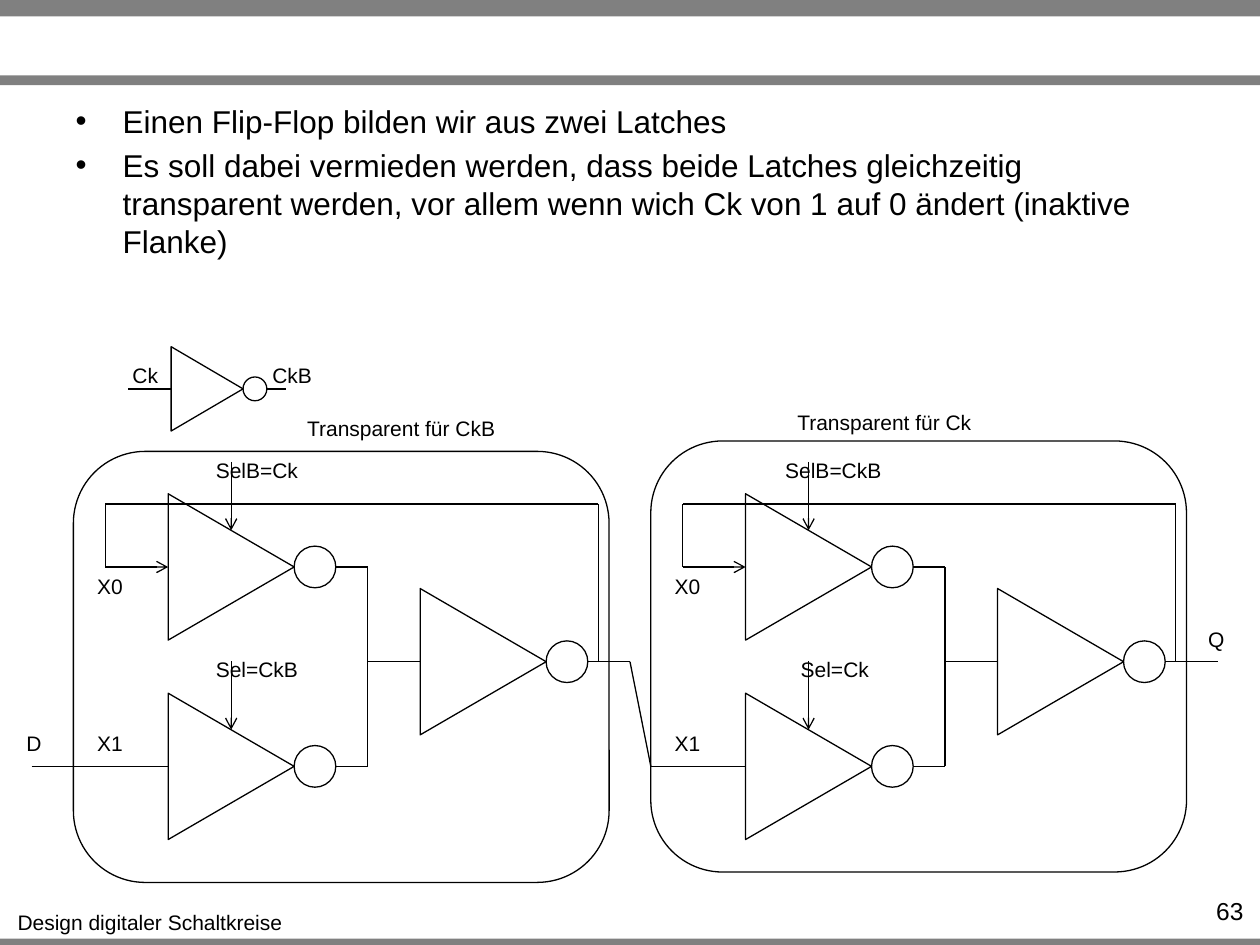
import itertools
from dataclasses import dataclass

import lxml.etree
import pptx
import pptx.dml.color
import pptx.enum.shapes
import pptx.enum.text
import pptx.oxml.ns
import pptx.util

Cm = pptx.util.Cm
Pt = pptx.util.Pt
RGB = pptx.dml.color.RGBColor
SHAPE = pptx.enum.shapes.MSO_SHAPE
ALIGN = pptx.enum.text.PP_ALIGN
qn = pptx.oxml.ns.qn


@dataclass(frozen=True)
class Theme:
    ink: RGB = RGB(0, 0, 0)
    paper: RGB = RGB(255, 255, 255)
    bar: RGB = RGB(128, 128, 128)
    font: str = "Arial"
    body_size: int = 18
    number_size: int = 14
    label_size: int = 12
    line_width: float = 0.75


class CircuitSlide:
    def __init__(self, slide, theme):
        self.slide = slide
        self.shapes = slide.shapes
        self.theme = theme

    def style_font(self, para, size):
        para.font.name = self.theme.font
        para.font.size = Pt(size)
        para.font.color.rgb = self.theme.ink

    def shape(self, kind, left, top, width, height, fill=None, outlined=True):
        shape = self.shapes.add_shape(kind, Cm(left), Cm(top), Cm(width), Cm(height))
        shape.shadow.inherit = False
        if fill is None:
            shape.fill.background()
        else:
            shape.fill.solid()
            shape.fill.fore_color.rgb = fill
        if outlined:
            shape.line.color.rgb = self.theme.ink
            shape.line.width = Pt(self.theme.line_width)
        else:
            shape.line.fill.background()
        return shape

    def bar(self, top, height):
        self.shape(SHAPE.RECTANGLE, 0, top, 25.4, height, self.theme.bar, outlined=False)

    def wire(self, *points, arrow=False):
        """Join the points with straight lines; the last one may end in an arrow."""
        for start, end in itertools.pairwise(points):
            line = self.shapes.add_connector(
                pptx.enum.shapes.MSO_CONNECTOR.STRAIGHT, *map(Cm, start + end))
            line.line.color.rgb = self.theme.ink
            line.line.width = Pt(self.theme.line_width)
            properties = line._element.spPr
            if arrow and end == points[-1]:
                lxml.etree.SubElement(properties.find(qn("a:ln")), qn("a:tailEnd"), type="arrow")
            lxml.etree.SubElement(properties, qn("a:effectLst"))

    def label(self, text, left, top, width, size=None, align=ALIGN.CENTER):
        box = self.shapes.add_textbox(Cm(left), Cm(top), Cm(width), Cm(0.76))
        box.text_frame.word_wrap = False
        para = box.text_frame.paragraphs[0]
        para.text = text
        para.alignment = align
        self.style_font(para, size or self.theme.label_size)

    def bullets(self, texts, left, top, width, height):
        body = self.slide.placeholders[1]
        body.left, body.top, body.width, body.height = map(Cm, (left, top, width, height))
        frame = body.text_frame
        frame.auto_size = pptx.enum.text.MSO_AUTO_SIZE.NONE
        frame.word_wrap = True
        for index, text in enumerate(texts):
            para = frame.paragraphs[0] if index == 0 else frame.add_paragraph()
            para.text = text
            para.space_before = Pt(3.6 if index else 0)
            properties = para._element.get_or_add_pPr()
            properties.set("marL", str(Cm(0.95)))
            properties.set("indent", str(-Cm(0.95)))
            lxml.etree.SubElement(properties, qn("a:buChar"), char="•")
            self.style_font(para, self.theme.body_size)

    def inverter(self, left, middle, lead_end, length=2.54, height=2.95, bubble=0.84):
        """Triangle pointing right, with a bubble and an output lead."""
        tip = left + length
        self.wire((tip, middle), (lead_end, middle))
        self.shape(SHAPE.OVAL, tip, middle - bubble / 2, bubble, bubble, self.theme.paper)
        triangle = self.shape(SHAPE.ISOSCELES_TRIANGLE, left + (length - height) / 2,
                              middle - length / 2, height, length)
        triangle.rotation = 90

    def latch(self, x, frame_top, output_end, selects):
        """Multiplexer of two inverters, output inverter and feedback loop."""
        upper, middle, lower = 11.43, 13.34, 15.45
        gate, joint, output, feedback = x + 1.91, x + 5.93, x + 6.99, x + 10.58
        for row, tag_top, (text, left, width) in zip((upper, lower), (11.43, 14.6), selects):
            self.inverter(gate, row, joint)
            self.wire((gate + 1.27, row - 2.12), (gate + 1.27, row - 0.74), arrow=True)
            self.label(text, left, row - 2.33, width)
            self.label("X0" if row == upper else "X1", x + 0.22, tag_top, 1.04)
        self.wire((joint, upper), (joint, lower))
        self.wire((joint, middle), (output, middle))
        self.inverter(output, middle, output_end)
        self.shape(SHAPE.ROUNDED_RECTANGLE, x, frame_top, 10.8, 8.69)
        self.wire((feedback, middle), (feedback, 10.16), (x + 0.64, 10.16),
                  (x + 0.64, upper), (gate, upper), arrow=True)


def main():
    deck = pptx.Presentation()
    deck.slide_width, deck.slide_height = Cm(25.4), Cm(19.05)
    slide = deck.slides.add_slide(deck.slide_layouts[1])
    title = slide.shapes.title._element
    title.getparent().remove(title)
    theme = Theme()
    page = CircuitSlide(slide, theme)

    # Page frame
    for top, height in ((18.92, 0.2), (0, 0.33), (1.52, 0.2)):
        page.bar(top, height)
    page.label("Design digitaler Schaltkreise", 0.08, 18.21, 5.89)
    page.label("63", 23.11, 17.93, 2.21, theme.number_size, ALIGN.RIGHT)

    # Explanation
    page.bullets((
        "Einen Flip-Flop bilden wir aus zwei Latches",
        "Es soll dabei vermieden werden, dass beide Latches gleichzeitig transparent "
        "werden, vor allem wenn wich Ck von 1 auf 0 ändert (inaktive Flanke)",
    ), 1.27, 1.93, 22.86, 1.88)

    # Clock inverter
    page.inverter(3.45, 7.84, 5.77, length=1.45, height=1.7, bubble=0.48)
    page.wire((2.59, 7.84), (3.45, 7.84))
    page.label("Ck", 2.41, 7.19, 1.04)
    page.label("CkB", 5.23, 7.19, 1.32)

    # Two latches in series
    page.latch(1.48, 9.1, 12.7, (("SelB=Ck", 4.09, 2.18), ("Sel=CkB", 4.09, 2.18)))
    page.latch(13.12, 8.89, 24.55, (("SelB=CkB", 15.57, 2.46), ("Sel=Ck", 15.88, 1.9)))
    page.label("Transparent für CkB", 5.92, 8.26, 4.34)
    page.label("Transparent für Ck", 15.8, 8.13, 4.06)

    # Data input, link between the latches, output
    page.wire((0.64, 15.45), (3.39, 15.45))
    page.wire((12.7, 13.34), (13.12, 15.45), (15.03, 15.45))
    page.label("D", 0.28, 14.6, 0.81)
    page.label("Q", 24.1, 12.5, 0.84)

    deck.save("out.pptx")


if __name__ == "__main__":
    main()
